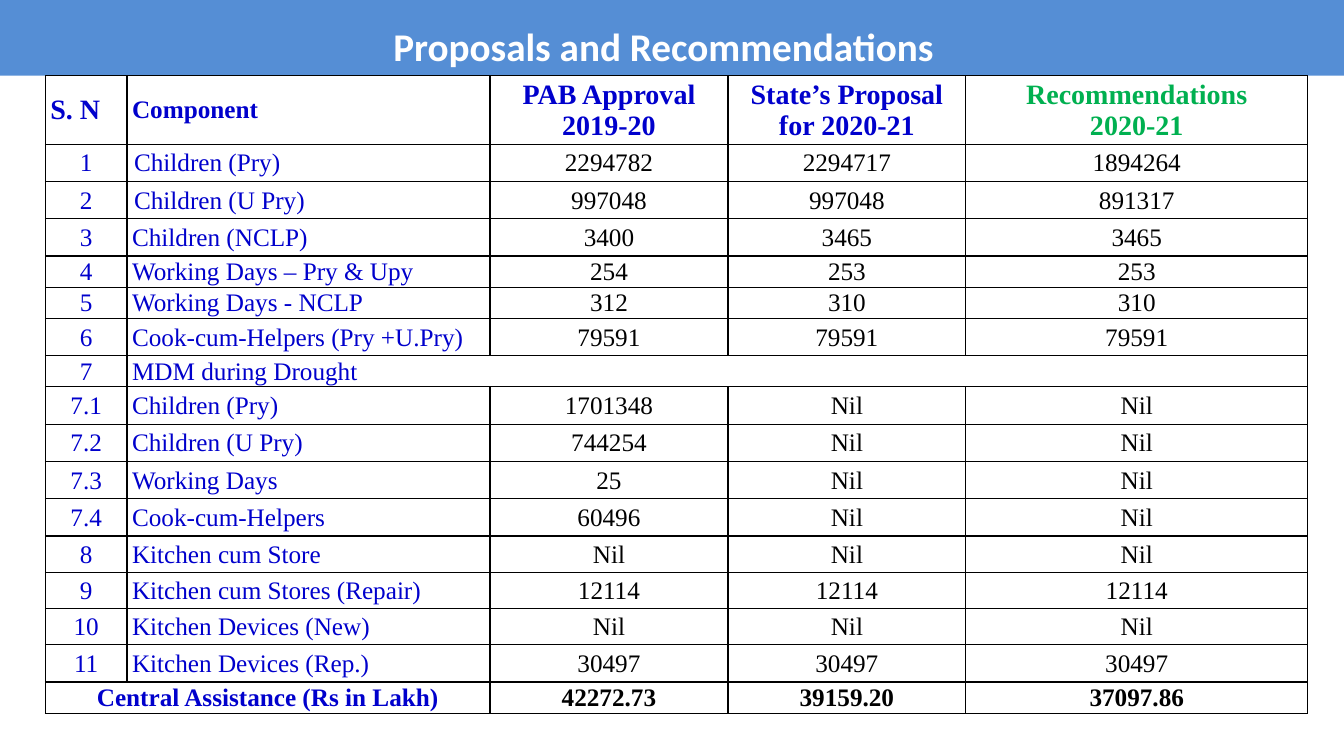
from lxml import etree
from pptx import Presentation
from pptx.dml.color import RGBColor
from pptx.enum.shapes import MSO_SHAPE
from pptx.enum.text import MSO_ANCHOR, PP_ALIGN
from pptx.oxml.ns import qn
from pptx.util import Inches, Pt

RECTANGLE = MSO_SHAPE.RECTANGLE
MIDDLE = MSO_ANCHOR.MIDDLE
LEFT, CENTER = PP_ALIGN.LEFT, PP_ALIGN.CENTER
BLUE, GREEN, BLACK, WHITE = "0000CC", "00B050", "000000", "FFFFFF"

COLUMN_WIDTHS = [0.81, 3.6, 2.36, 2.36, 3.39]
ROW_HEIGHTS = [0.68, 0.37, 0.37, 0.37, 0.31, 0.31, 0.37, 0.31,
               0.37, 0.37, 0.37, 0.37, 0.36, 0.36, 0.36, 0.37, 0.31]
ROWS = [
    ["S. N", "Component", "PAB Approval 2019-20",
     "State’s Proposal for 2020-21", "Recommendations\n2020-21"],
    ["1", "Children (Pry)", "2294782", "2294717", "1894264"],
    ["2", "Children (U Pry)", "997048", "997048", "891317"],
    ["3", "Children (NCLP)", "3400", "3465", "3465"],
    ["4", "Working Days – Pry & Upy", "254", "253", "253"],
    ["5", "Working Days - NCLP", "312", "310", "310"],
    ["6", "Cook-cum-Helpers (Pry +U.Pry)", "79591", "79591", "79591"],
    ["7", "MDM during Drought", "", "", ""],
    ["7.1", "Children (Pry)", "1701348", "Nil", "Nil"],
    ["7.2", "Children (U Pry)", "744254", "Nil", "Nil"],
    ["7.3", "Working Days", "25", "Nil", "Nil"],
    ["7.4", "Cook-cum-Helpers", "60496", "Nil", "Nil"],
    ["8", "Kitchen cum Store", "Nil", "Nil", "Nil"],
    ["9", "Kitchen cum Stores (Repair)", "12114", "12114", "12114"],
    ["10", "Kitchen Devices (New)", "Nil", "Nil", "Nil"],
    ["11", "Kitchen Devices (Rep.)", "30497", "30497", "30497"],
    ["Central Assistance (Rs in Lakh)", "", "42272.73", "39159.20", "37097.86"],
]
HEADER, DROUGHT, TOTAL = 0, 7, len(ROWS) - 1


def write_text(frame, text, *, size, color, font="Times New Roman",
               bold=False, align=CENTER, line_spacing=None):
    """Fill a text frame, with one paragraph for each line of text."""
    for number, line in enumerate(text.split("\n")):
        para = frame.add_paragraph() if number else frame.paragraphs[0]
        para.alignment = align
        para.line_spacing = line_spacing
        span = para.add_run()
        span.text = line
        span.font.name = font
        span.font.size = Pt(size)
        span.font.bold = bold
        span.font.color.rgb = RGBColor.from_string(color)


def add_borders(cell, color, width):
    properties = cell._tc.get_or_add_tcPr()
    for side in ("a:lnL", "a:lnR", "a:lnT", "a:lnB"):
        line = etree.SubElement(properties, qn(side), w=str(Pt(width)))
        fill = etree.SubElement(line, qn("a:solidFill"))
        etree.SubElement(fill, qn("a:srgbClr"), val=color)


deck = Presentation()
deck.slide_width, deck.slide_height = Inches(13.33), Inches(7.5)
page = deck.slides.add_slide(deck.slide_layouts[6])

# Title band
band = page.shapes.add_shape(RECTANGLE, Inches(0), Inches(-0.02),
                             Inches(13.33), Inches(0.77))
band.shadow.inherit = False
band.fill.solid()
band.fill.fore_color.rgb = RGBColor.from_string("558ED5")
band.line.fill.background()
band.text_frame.word_wrap = True
band.text_frame.vertical_anchor = MIDDLE
band.text_frame.margin_right = Inches(0.27)
write_text(band.text_frame, "Proposals and Recommendations", size=28,
           color=WHITE, font="Calibri", bold=True, line_spacing=1.4)

# Table of components
table = page.shapes.add_table(len(ROWS), len(COLUMN_WIDTHS), Inches(0.45), Inches(0.75),
                              Inches(12.52), Inches(sum(ROW_HEIGHTS))).table
table.first_row = table.horz_banding = False
for column, width in zip(table.columns, COLUMN_WIDTHS):
    column.width = Inches(width)
for row, height in zip(table.rows, ROW_HEIGHTS):
    row.height = Inches(height)
table.cell(DROUGHT, 1).merge(table.cell(DROUGHT, 4))
table.cell(TOTAL, 0).merge(table.cell(TOTAL, 1))

for r, texts in enumerate(ROWS):
    for c, text in enumerate(texts):
        cell = table.cell(r, c)
        add_borders(cell, BLACK, 1)
        cell.fill.solid()
        cell.fill.fore_color.rgb = RGBColor.from_string(WHITE)
        cell.vertical_anchor = MIDDLE
        cell.margin_left = cell.margin_right = Inches(0.07 if c == 1 and r in (1, 2) else 0.05)
        cell.margin_top, cell.margin_bottom = Inches(0.01), Inches(0)
        if not text:
            continue
        if r == HEADER:
            color = GREEN if c == 4 else BLUE
        else:
            color = BLUE if c < 2 else BLACK
        write_text(cell.text_frame, text, color=color,
                   size=20 if r == HEADER and c != 1 else 18,
                   bold=r in (HEADER, TOTAL),
                   align=LEFT if c == 1 or (r, c) == (HEADER, 0) else CENTER)

deck.save("out.pptx")
